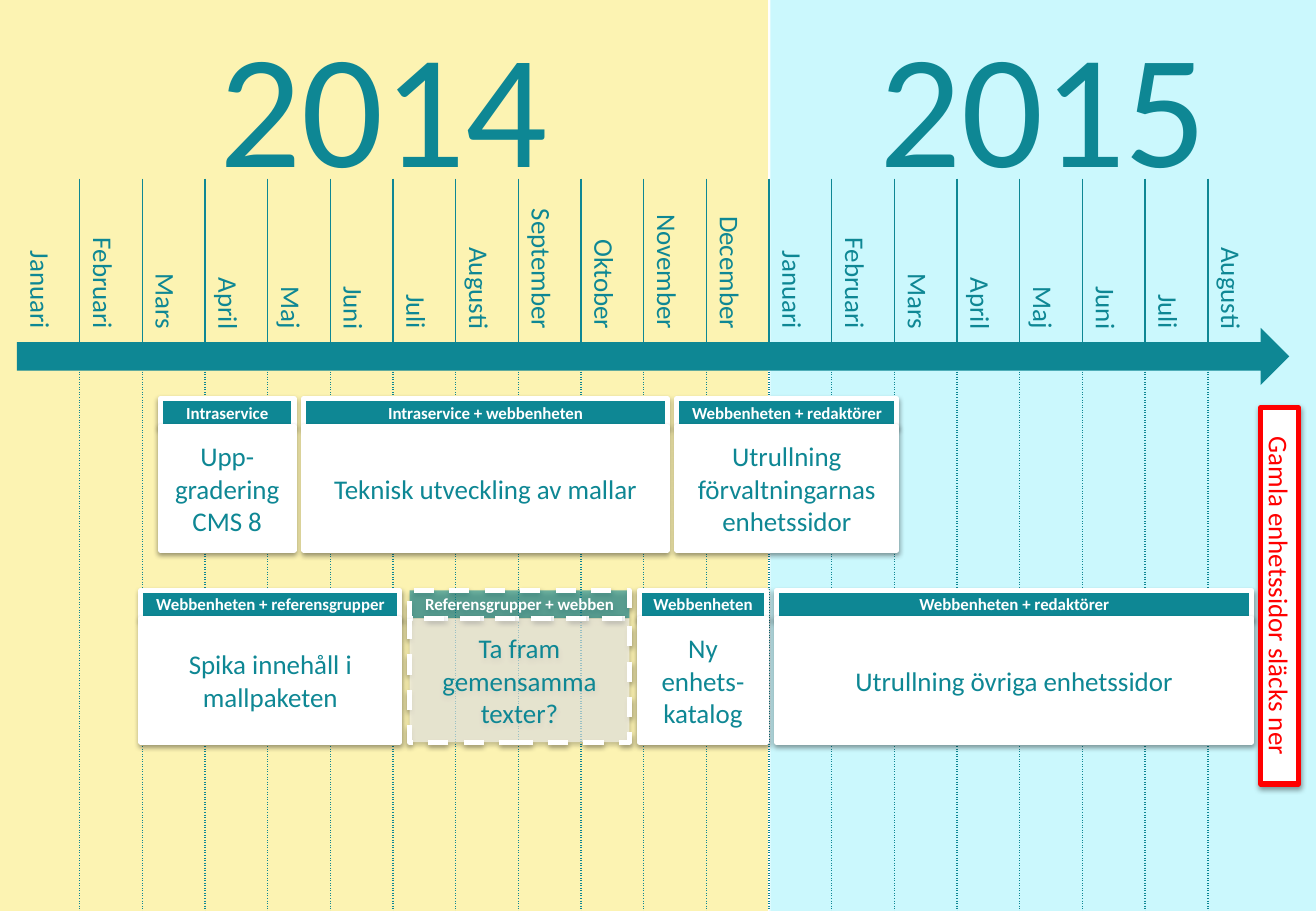
import lxml.etree
import pptx
import pptx.dml.color
import pptx.enum.dml
import pptx.enum.shapes
import pptx.enum.text
import pptx.oxml
import pptx.oxml.ns
import pptx.util
from pptx.util import Inches

RGBColor = pptx.dml.color.RGBColor
TEAL = RGBColor(0x0E, 0x87, 0x94)
YELLOW = RGBColor(0xFC, 0xF3, 0xB2)
CYAN = RGBColor(0xCB, 0xF8, 0xFD)
WHITE = RGBColor(0xFF, 0xFF, 0xFF)
RED = RGBColor(0xFF, 0x00, 0x00)
BLACK = RGBColor(0x00, 0x00, 0x00)

FONT = "Calibri"
NO_STYLE = "{2D5ABB26-0587-4C30-8999-92F81FD0307C}"
MSO_SHAPE = pptx.enum.shapes.MSO_SHAPE
PP_ALIGN = pptx.enum.text.PP_ALIGN
MSO_ANCHOR = pptx.enum.text.MSO_ANCHOR

MONTHS = ["Januari", "Februari", "Mars", "April", "Maj", "Juni", "Juli",
          "Augusti", "September", "Oktober", "November", "December"]
TIMELINE = MONTHS + MONTHS[:8]
COLUMN_WIDTH = 0.516
ROW_HEIGHTS = [1.34, 5.12]

HEADER_HEIGHT = 0.23
BODY_HEIGHT = 1.02
TOP_ROW, BOTTOM_ROW = 3.28, 4.86
CARDS = [
    (1.16, BOTTOM_ROW, 2.13, "Webbenheten + referensgrupper", "Spika innehåll i mallpaketen", False),
    (1.32, TOP_ROW, 1.1, "Intraservice", "Upp-gradering CMS 8", False),
    (2.5, TOP_ROW, 2.99, "Intraservice + webbenheten", "Teknisk utveckling av mallar", False),
    (5.57, TOP_ROW, 1.81, "Webbenheten + redaktörer", "Utrullning förvaltningarnas enhetssidor", False),
    (5.26, BOTTOM_ROW, 1.05, "Webbenheten", "Ny enhets-katalog", False),
    (6.39, BOTTOM_ROW, 3.91, "Webbenheten + redaktörer", "Utrullning övriga enhetssidor", False),
    (3.37, BOTTOM_ROW, 1.81, "Referensgrupper + webben", "Ta fram gemensamma texter?", True),
]


def add_element(parent, tag, **attributes):
    return lxml.etree.SubElement(parent, pptx.oxml.ns.qn(tag), attributes)


def format_text(tf, text, size, color, align, bold=False):
    tf.text = text
    p = tf.paragraphs[0]
    p.alignment = align
    font = p.runs[0].font
    font.name = FONT
    font.size = pptx.util.Pt(size)
    font.bold = bold
    font.color.rgb = color


def add_block(shapes, kind, left, top, width, height, fill):
    sp = shapes.add_shape(kind, Inches(left), Inches(top), Inches(width), Inches(height))
    sp.shadow.inherit = False
    sp.fill.solid()
    sp.fill.fore_color.rgb = fill
    sp.line.fill.background()
    return sp


def add_year(slide, left, width, year, fill):
    sp = add_block(slide.shapes, MSO_SHAPE.RECTANGLE, left, 0, width, 7.5, fill)
    sp.text_frame.word_wrap = True
    sp.text_frame.vertical_anchor = MSO_ANCHOR.TOP
    format_text(sp.text_frame, year, 96, TEAL, PP_ALIGN.CENTER)


def add_shadow(sp):
    effects = sp._element.spPr.find(pptx.oxml.ns.qn("a:effectLst"))
    shadow = add_element(effects, "a:outerShdw", blurRad=str(pptx.util.Pt(3.1)),
                         dist=str(pptx.util.Pt(1.6)), dir="5400000", rotWithShape="0")
    color = add_element(shadow, "a:srgbClr", val=str(BLACK))
    add_element(color, "a:alpha", val="38000")


def add_label(shapes, left, top, width, height, fill, line, text, size, color, bold=False):
    sp = add_block(shapes, MSO_SHAPE.RECTANGLE, left, top, width, height, fill)
    sp.line.color.rgb = line
    sp.line.width = pptx.util.Pt(3)
    add_shadow(sp)
    sp.text_frame.word_wrap = True
    sp.text_frame.vertical_anchor = MSO_ANCHOR.MIDDLE
    format_text(sp.text_frame, text, size, color, PP_ALIGN.CENTER, bold)
    return sp


def make_tentative(sp):
    sp.line.dash_style = pptx.enum.dml.MSO_LINE.DASH
    color = sp._element.spPr.find(pptx.oxml.ns.qn("a:solidFill"))[0]
    add_element(color, "a:alpha", val="59000")


def add_card(slide, left, top, width, who, task, tentative):
    shapes = slide.shapes.add_group_shape().shapes
    header = add_label(shapes, left, top, width, HEADER_HEIGHT, TEAL, WHITE, who, 10, WHITE, True)
    body = add_label(shapes, left, top + HEADER_HEIGHT, width, BODY_HEIGHT,
                     WHITE, WHITE, task, 16, TEAL)
    if tentative:
        make_tentative(header)
        make_tentative(body)


def add_border(cell, side, dash):
    ln = add_element(cell._tc.get_or_add_tcPr(), side, w=str(pptx.util.Pt(1)))
    add_element(add_element(ln, "a:solidFill"), "a:srgbClr", val=str(TEAL))
    add_element(ln, "a:prstDash", val=dash)


def add_months(slide):
    count = len(TIMELINE)
    frame = slide.shapes.add_table(2, count, Inches(0.14), Inches(1.47),
                                   Inches(COLUMN_WIDTH * count), Inches(sum(ROW_HEIGHTS)))
    table = frame.table
    table.first_row = False
    table.horz_banding = False
    table._tbl.tblPr.find(pptx.oxml.ns.qn("a:tableStyleId")).text = NO_STYLE
    for column in table.columns:
        column.width = Inches(COLUMN_WIDTH)
    for row, (height, dash) in enumerate(zip(ROW_HEIGHTS, ["solid", "sysDot"])):
        table.rows[row].height = Inches(height)
        for col in range(count):
            cell = table.cell(row, col)
            if col > 0:
                add_border(cell, "a:lnL", dash)
            if col < count - 1:
                add_border(cell, "a:lnR", dash)
            cell.fill.background()
    for col, month in enumerate(TIMELINE):
        cell = table.cell(0, col)
        cell._tc.get_or_add_tcPr().set("vert", "vert")
        format_text(cell.text_frame, month, 16, TEAL, PP_ALIGN.RIGHT)


def main():
    prs = pptx.Presentation()
    prs.slide_width = Inches(10.83)
    prs.slide_height = Inches(7.5)
    slide = prs.slides.add_slide(prs.slide_layouts[6])
    add_year(slide, 6.34, 4.49, "2015", CYAN)
    add_year(slide, 0, 6.32, "2014", YELLOW)
    add_months(slide)
    add_block(slide.shapes, MSO_SHAPE.RIGHT_ARROW, 0.14, 2.7, 10.47, 0.47, TEAL)
    deadline = add_label(slide.shapes, 8.98, 4.75, 3.1, 0.31, WHITE, RED,
                         "Gamla enhetssidor släcks ner", 16, RED)
    deadline.rotation = 90
    for card in CARDS:
        add_card(slide, *card)
    prs.save("out.pptx")


if __name__ == "__main__":
    main()
